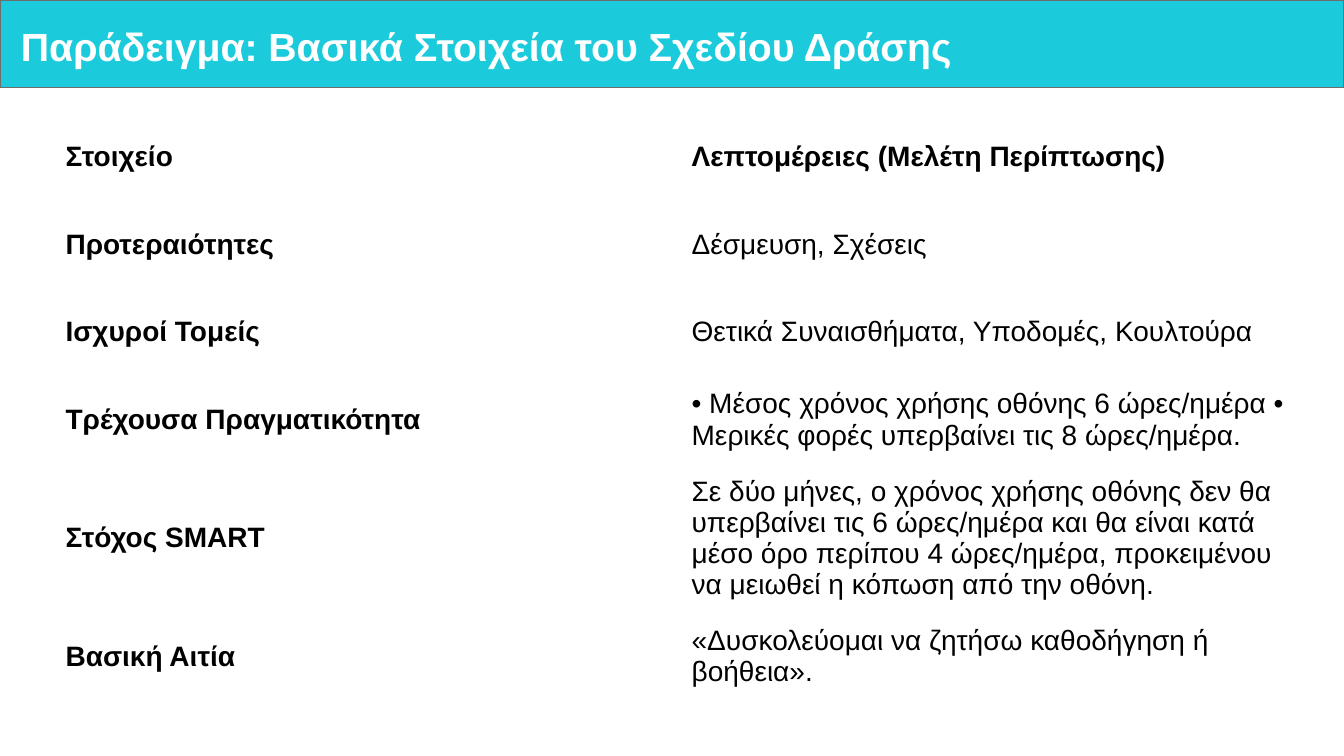
from dataclasses import dataclass

from pptx import Presentation
from pptx.dml.color import RGBColor as Color
from pptx.enum.shapes import MSO_SHAPE as Shape
from pptx.enum.text import MSO_ANCHOR as Anchor, PP_ALIGN as Align
from pptx.util import Inches, Pt


@dataclass(frozen=True)
class Theme:
    font: str = "Arial"
    bar: str = "1BCBDC"
    bar_line: str = "6C6E70"
    title: str = "FFFFFF"
    body: str = "000000"
    title_size: int = 28
    body_size: int = 20


def write(frame, text, *, font, size, color, bold=False, spacing=None):
    """Put one formatted paragraph in a text frame."""
    para = frame.paragraphs[0]
    para.alignment = Align.LEFT
    if spacing:
        para.line_spacing = spacing
    span = para.add_run()
    span.text = text
    span.font.name = font
    span.font.size = Pt(size)
    span.font.bold = bold
    span.font.color.rgb = Color.from_string(color)


class SlideBuilder:
    def __init__(self, page, theme):
        self.page = page
        self.theme = theme

    def bar(self, left, top, width, height):
        bar = self.page.shapes.add_shape(
            Shape.RECTANGLE, *map(Inches, (left, top, width, height)))
        bar.shadow.inherit = False
        bar.fill.solid()
        bar.fill.fore_color.rgb = Color.from_string(self.theme.bar)
        bar.line.color.rgb = Color.from_string(self.theme.bar_line)
        bar.line.width = Pt(1)

    def title(self, text, left, top, width, height):
        box = self.page.shapes.add_textbox(
            *map(Inches, (left, top, width, height)))
        frame = box.text_frame
        frame.word_wrap = True
        frame.vertical_anchor = Anchor.MIDDLE
        frame.margin_left = Inches(0.1)
        frame.margin_top = frame.margin_right = frame.margin_bottom = Inches(0.06)
        write(frame, text, font=self.theme.font, size=self.theme.title_size,
              color=self.theme.title, bold=True, spacing=0.9)

    def table(self, rows, left, top, column_width, heights):
        columns = len(rows[0])
        table = self.page.shapes.add_table(
            len(rows), columns, Inches(left), Inches(top),
            Inches(column_width * columns), Inches(sum(heights))).table
        table.first_row = table.horz_banding = False
        for column in table.columns:
            column.width = Inches(column_width)
        for r, (texts, height) in enumerate(zip(rows, heights)):
            table.rows[r].height = Inches(height)
            for c, text in enumerate(texts):
                cell = table.cell(r, c)
                cell.fill.background()
                cell.vertical_anchor = Anchor.MIDDLE
                # The header row and the label column are bold
                write(cell.text_frame, text, font=self.theme.font,
                      size=self.theme.body_size, color=self.theme.body,
                      bold=r == 0 or c == 0)


PLAN_ROWS = [
    ("Στοιχείο", "Λεπτομέρειες (Μελέτη Περίπτωσης)"),
    ("Προτεραιότητες", "Δέσμευση, Σχέσεις"),
    ("Ισχυροί Τομείς", "Θετικά Συναισθήματα, Υποδομές, Κουλτούρα"),
    ("Τρέχουσα Πραγματικότητα",
     "• Μέσος χρόνος χρήσης οθόνης 6 ώρες/ημέρα "
     "• Μερικές φορές υπερβαίνει τις 8 ώρες/ημέρα."),
    ("Στόχος SMART",
     "Σε δύο μήνες, ο χρόνος χρήσης οθόνης δεν θα υπερβαίνει τις "
     "6 ώρες/ημέρα και θα είναι κατά μέσο όρο περίπου 4 ώρες/ημέρα, "
     "προκειμένου να μειωθεί η κόπωση από την οθόνη."),
    ("Βασική Αιτία", "«Δυσκολεύομαι να ζητήσω καθοδήγηση ή βοήθεια»."),
]


def main():
    deck = Presentation()
    deck.slide_width, deck.slide_height = Inches(13.33), Inches(7.5)
    page = deck.slides.add_slide(deck.slide_layouts[6])
    builder = SlideBuilder(page, Theme())

    # Header
    builder.bar(0, 0, 13.33, 0.87)
    builder.title("Παράδειγμα: Βασικά Στοιχεία του Σχεδίου Δράσης",
                  0.11, 0.09, 13.06, 0.78)

    # Action plan table
    builder.table(PLAN_ROWS, 0.55, 1.12, 6.21,
                  [0.87] * 4 + [1.48, 0.87])

    deck.save("out.pptx")


if __name__ == "__main__":
    main()
